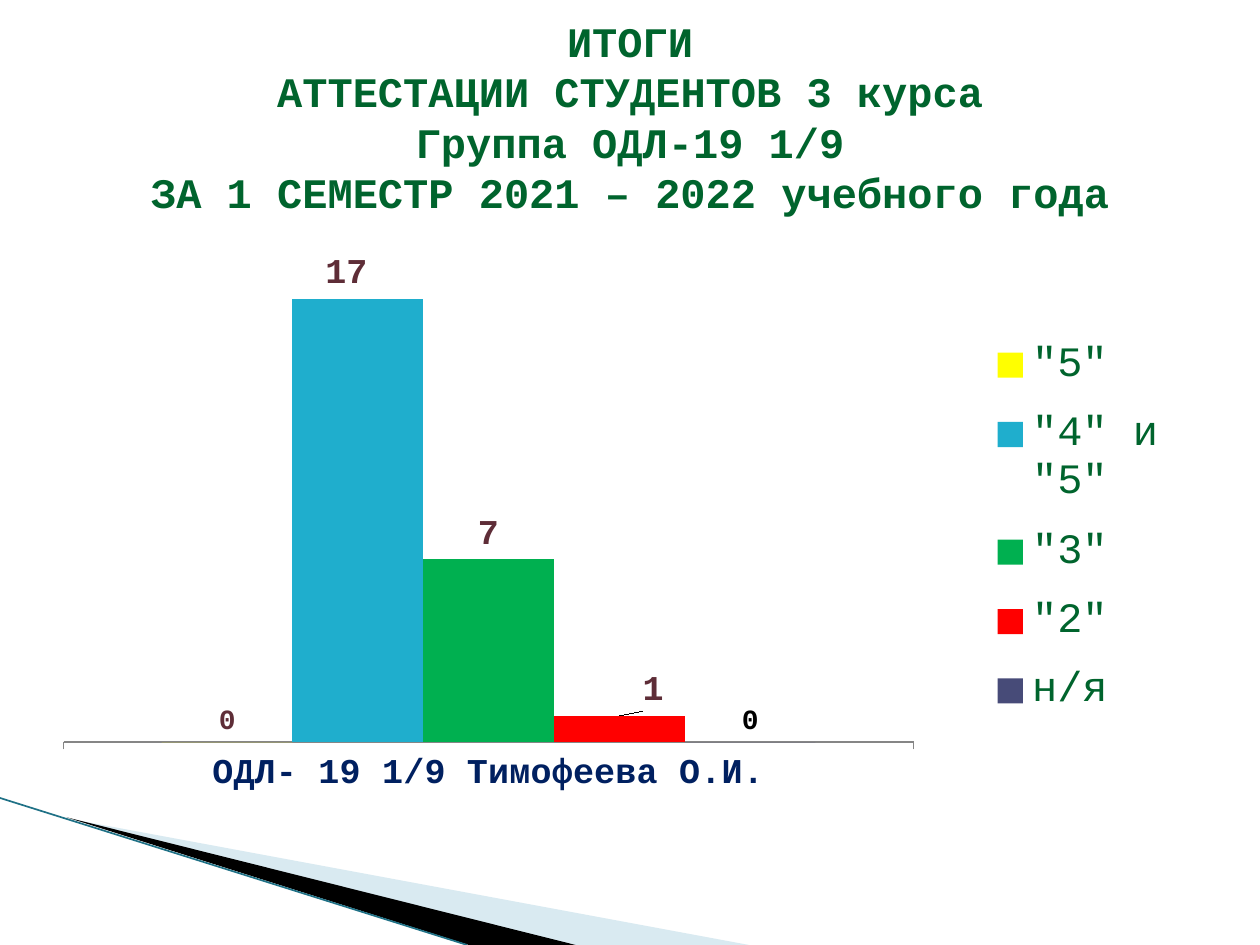
from dataclasses import dataclass

from lxml import etree
from pptx import Presentation
from pptx import util as u
from pptx.chart.data import CategoryChartData
from pptx.dml.color import RGBColor
from pptx.enum import chart as c
from pptx.enum import shapes, text
from pptx.oxml.ns import qn

FACE = "Courier New"
GREEN, PLUM, NAVY = "00642D", "5E2D37", "002060"


@dataclass
class Grade:
    name: str
    count: int
    fill: str
    label_size: int = 20
    label_color: str = PLUM
    label_shift: float = 0  # share of the chart width


@dataclass
class Wedge:
    corners: list
    fill: str
    opacity: int = 100


GRADES = [
    Grade('"5"', 0, "FFFF00", label_size=16),
    Grade('"4" и "5"', 17, "1FAECD", label_shift=-0.01),
    Grade('"3"', 7, "00B050"),
    Grade('"2"', 1, "FF0000", label_shift=0.03),
    Grade("н/я", 0, "474B78", label_size=16, label_color="000000"),
]
WEDGES = [
    Wedge([(40, 468), (428, 540), (328, 540)], "A0CBDC", 40),
    Wedge([(38, 467), (329, 540), (268, 540)], "000000"),
]
HEADING = [
    "ИТОГИ",
    "АТТЕСТАЦИИ СТУДЕНТОВ 3 курса",
    "Группа ОДЛ-19 1/9",
    "ЗА 1 СЕМЕСТР 2021 – 2022 учебного года",
]


def rgb(value: str) -> RGBColor:
    return RGBColor.from_string(value)


def style(font, size: float, color: str, bold: bool = False) -> None:
    font.name, font.size, font.bold = FACE, u.Pt(size), bold
    font.color.rgb = rgb(color)


def manual_layout(**values) -> etree._Element:
    layout = etree.Element(qn("c:layout"))
    manual = etree.SubElement(layout, qn("c:manualLayout"))
    for tag, value in values.items():
        etree.SubElement(manual, qn(f"c:{tag}")).set("val", str(value))
    return layout


def draw_wedge(slide, wedge: Wedge) -> None:
    start, *others = [(u.Pt(x), u.Pt(y)) for x, y in wedge.corners]
    builder = slide.shapes.build_freeform(*start)
    builder.add_line_segments(others, close=True)
    shape = builder.convert_to_shape()
    shape.shadow.inherit = False
    shape.line.fill.background()
    shape.fill.solid()
    shape.fill.fore_color.rgb = rgb(wedge.fill)
    if wedge.opacity < 100:
        color = shape.fill._xPr.find(".//" + qn("a:srgbClr"))
        etree.SubElement(color, qn("a:alpha")).set("val", str(wedge.opacity * 1000))


def draw_edge(slide) -> None:
    edge = slide.shapes.add_connector(
        shapes.MSO_CONNECTOR.STRAIGHT, u.Pt(0), u.Pt(456), u.Pt(267), u.Pt(540))
    edge.line.color.rgb = rgb("1F7186")
    edge.line.width = u.Pt(0.95)
    etree.SubElement(edge._element.spPr, qn("a:effectLst"))


def write_heading(slide) -> None:
    title = slide.shapes.title
    title.left, title.top, title.width, title.height = map(u.Pt, (36, 9, 648, 115))
    frame = title.text_frame
    frame.word_wrap = True
    frame.auto_size = text.MSO_AUTO_SIZE.NONE
    frame.vertical_anchor = text.MSO_ANCHOR.MIDDLE
    paragraph = frame.paragraphs[0]
    paragraph.alignment = text.PP_ALIGN.CENTER
    for number, line in enumerate(HEADING):
        if number:
            paragraph.add_line_break()
        run = paragraph.add_run()
        run.text = line
        style(run.font, 24, GREEN, bold=True)


def format_series(series, grade: Grade) -> None:
    series.format.fill.solid()
    series.format.fill.fore_color.rgb = rgb(grade.fill)
    series.invert_if_negative = False
    labels = series.data_labels
    labels.show_value = True
    labels.position = c.XL_LABEL_POSITION.OUTSIDE_END
    style(labels.font, grade.label_size, grade.label_color, bold=True)
    if grade.label_shift:
        label = series.points[0].data_label
        style(label.font, grade.label_size, grade.label_color, bold=True)
        label.position = c.XL_LABEL_POSITION.OUTSIDE_END
        index = series._element.find(".//" + qn("c:dLbl") + "/" + qn("c:idx"))
        index.addnext(manual_layout(x=grade.label_shift, y=0))


def draw_chart(slide) -> None:
    data = CategoryChartData()
    data.categories = ["ОДЛ- 19 1/9 Тимофеева О.И."]
    for grade in GRADES:
        data.add_series(grade.name, [grade.count])
    chart = slide.shapes.add_chart(
        c.XL_CHART_TYPE.COLUMN_CLUSTERED,
        u.Pt(36), u.Pt(145.5), u.Pt(648), u.Pt(327.5), data).chart
    style(chart.font, 10, "000000")
    chart.has_title = False

    # Columns
    plot = chart.plots[0]
    plot.gap_width, plot.overlap, plot.vary_by_categories = 150, 0, False
    for series, grade in zip(plot.series, GRADES):
        format_series(series, grade)

    # Axes
    groups = chart.category_axis
    groups.major_tick_mark = c.XL_TICK_MARK.OUTSIDE
    groups.format.line.color.rgb = rgb("868686")
    style(groups.tick_labels.font, 20, NAVY, bold=True)
    counts = chart.value_axis
    counts.visible = counts.has_major_gridlines = False
    counts.minimum_scale, counts.maximum_scale = 0, 18.6

    # Legend and plot area
    chart.has_legend = True
    legend = chart.legend
    legend.position = c.XL_LEGEND_POSITION.RIGHT
    legend.include_in_layout = False
    style(legend.font, 24, GREEN)
    legend._element.find(qn("c:legendPos")).addnext(manual_layout(
        xMode="edge", yMode="edge", x=0.8, y=0.11, w=0.19, h=0.73))
    area = chart._chartSpace.find(".//" + qn("c:plotArea"))
    for old in area.findall(qn("c:layout")):
        area.remove(old)
    area.insert(0, manual_layout(
        layoutTarget="inner", xMode="edge", yMode="edge", x=0, y=0, w=0.75, h=0.85))


def main() -> None:
    deck = Presentation()
    deck.slide_width, deck.slide_height = u.Pt(720), u.Pt(540)
    slide = deck.slides.add_slide(deck.slide_layouts[5])
    # Corner decoration
    for wedge in WEDGES:
        draw_wedge(slide, wedge)
    draw_edge(slide)
    # Content
    write_heading(slide)
    draw_chart(slide)
    deck.save("out.pptx")


if __name__ == "__main__":
    main()
